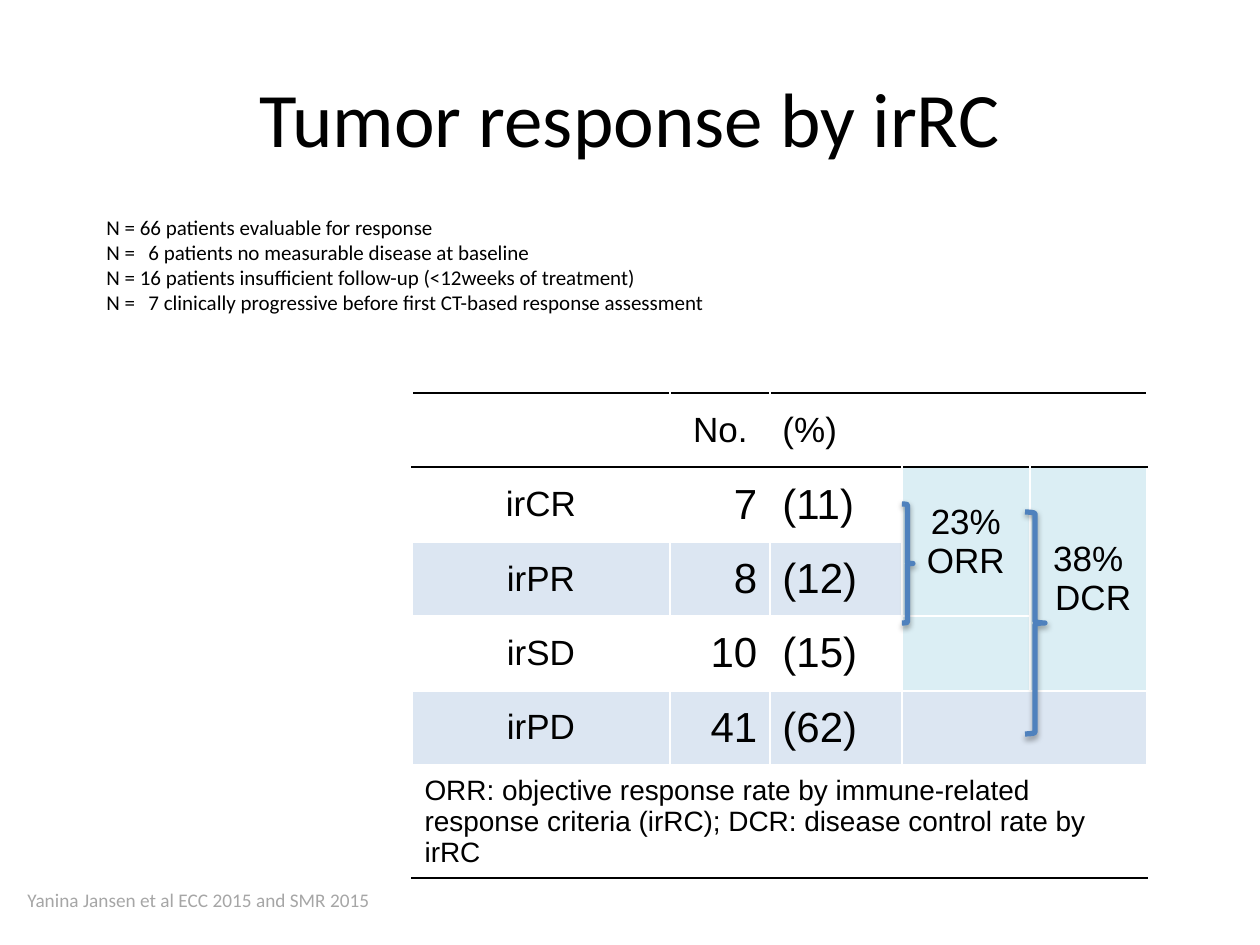
from lxml.etree import SubElement
from pptx import Presentation
from pptx.dml.color import RGBColor
from pptx.enum.shapes import MSO_SHAPE
from pptx.enum.text import MSO_ANCHOR, PP_ALIGN
from pptx.oxml import parse_xml
from pptx.oxml.ns import nsdecls, qn
from pptx.util import Emu, Pt

COLORS = {"black": "000000", "grey": "A6A6A6", "white": "FFFFFF",
          "band": "DCE6F2", "rate": "DBEEF4", "brace": "4F81BD"}
LEFT, CENTER, RIGHT = PP_ALIGN.LEFT, PP_ALIGN.CENTER, PP_ALIGN.RIGHT

TITLE = "Tumor response by irRC"
# A tab lines up the single-digit counts with the units of the others
PATIENTS = [
    "N = 66 patients evaluable for response",
    "N =\t6 patients no measurable disease at baseline",
    "N = 16 patients insufficient follow-up (<12weeks of treatment)",
    "N =\t7 clinically progressive before first CT-based response assessment",
]
SOURCE = "Yanina Jansen et al ECC 2015 and SMR 2015"
HEADER = ["", "No. ", "(%)"]
RESPONSES = [("irCR", "7", "(11)"), ("irPR", "8", "(12)"),
             ("irSD", "10", "(15)"), ("irPD", "41", "(62)")]
RATES = {(1, 3): ["23% ORR"], (1, 4): ["38%", " DCR"]}
FOOTNOTE = ("ORR: objective response rate by immune-related response criteria "
            "(irRC); DCR: disease control rate by irRC")

# Lengths in px
TABLE_AT = (412, 393)
COLUMNS = [258, 100, 132, 128, 117]
ROWS = [74, 75, 74, 75, 74, 113]
MERGES = [((0, 2), (0, 4)), ((1, 3), (2, 3)), ((1, 4), (3, 4)),
          ((4, 3), (4, 4)), ((5, 0), (5, 4))]
BRACES = [(902, 504, 11, 119), (1025, 512, 20, 222)]
COUNT_TAB = 42


def px(length):
    return Emu(round(length * 914400 / 126))


def rgb(name):
    return RGBColor.from_string(COLORS[name])


def write(frame, lines, size, font="Arial", color="black", align=LEFT):
    for number, line in enumerate(lines):
        para = frame.add_paragraph() if number else frame.paragraphs[0]
        para.text = line
        para.alignment = align
        para.font.size = Pt(size)
        para.font.name = font
        para.font.color.rgb = rgb(color)
        if "\t" in line:
            tabs = SubElement(para._p.get_or_add_pPr(), qn("a:tabLst"))
            SubElement(tabs, qn("a:tab"), pos=str(px(COUNT_TAB)), algn="l")
            para._p.pPr.insert(0, tabs)


def add_text(page, at, lines, size, wrap=True, **style):
    frame = page.shapes.add_textbox(*map(px, at)).text_frame
    frame.word_wrap = wrap
    write(frame, lines, size, "Calibri", **style)
    return frame


def rule(cell, *sides):
    """Draw black rules; sides are in schema order, ahead of the fill."""
    for place, side in enumerate(sides):
        cell._tc.get_or_add_tcPr().insert(place, parse_xml(
            f'<a:ln{side} {nsdecls("a")} w="12700"><a:solidFill>'
            f'<a:srgbClr val="{COLORS["black"]}"/></a:solidFill></a:ln{side}>'))


def add_table(page):
    table = page.shapes.add_table(len(ROWS), len(COLUMNS), *map(px, TABLE_AT),
                                  px(sum(COLUMNS)), px(sum(ROWS))).table
    table.first_row = table.horz_banding = False
    for column, width in zip(table.columns, COLUMNS):
        column.width = px(width)
    for row, height in zip(table.rows, ROWS):
        row.height = px(height)

    # Fills and rules
    last = len(ROWS) - 1
    for r in range(len(ROWS)):
        for c in range(len(COLUMNS)):
            cell = table.cell(r, c)
            cell.vertical_anchor = MSO_ANCHOR.MIDDLE
            rates = c >= 3 and 1 <= r <= 3
            banded = r in (2, 4)
            cell.fill.solid()
            cell.fill.fore_color.rgb = rgb(
                "rate" if rates else "band" if banded else "white")
            if r == 0:
                rule(cell, "T", "B")
            elif r == 1:
                rule(cell, "T")
            elif r == last:
                rule(cell, "B")
    for start, end in MERGES:
        table.cell(*start).merge(table.cell(*end))

    # Texts
    for r, texts in enumerate([HEADER, *RESPONSES]):
        for c, (text, align) in enumerate(zip(texts, (CENTER, RIGHT, LEFT))):
            if text:
                size = 24 if r and c else 20
                write(table.cell(r, c).text_frame, [text], size, align=align)
    for place, lines in RATES.items():
        write(table.cell(*place).text_frame, lines, 20, align=CENTER)
    write(table.cell(last, 0).text_frame, [FOOTNOTE], 16)


def add_brace(page, at):
    # Keeps the theme's soft shadow
    brace = page.shapes.add_shape(MSO_SHAPE.RIGHT_BRACE, *map(px, at))
    brace.fill.background()
    brace.line.color.rgb = rgb("brace")
    brace.line.width = Pt(3)


def main():
    deck = Presentation()
    deck.slide_width, deck.slide_height = px(1260), px(945)
    page = deck.slides.add_slide(deck.slide_layouts[6])

    title = add_text(page, (63, 38, 1134, 157), [TITLE], 44, align=CENTER)
    title.vertical_anchor = MSO_ANCHOR.MIDDLE
    add_table(page)
    for at in BRACES:
        add_brace(page, at)
    add_text(page, (94, 208, 1012, 115), PATIENTS, 12)
    add_text(page, (15, 882, 372, 36), [SOURCE], 11, wrap=False, color="grey")
    deck.save("out.pptx")


if __name__ == "__main__":
    main()
